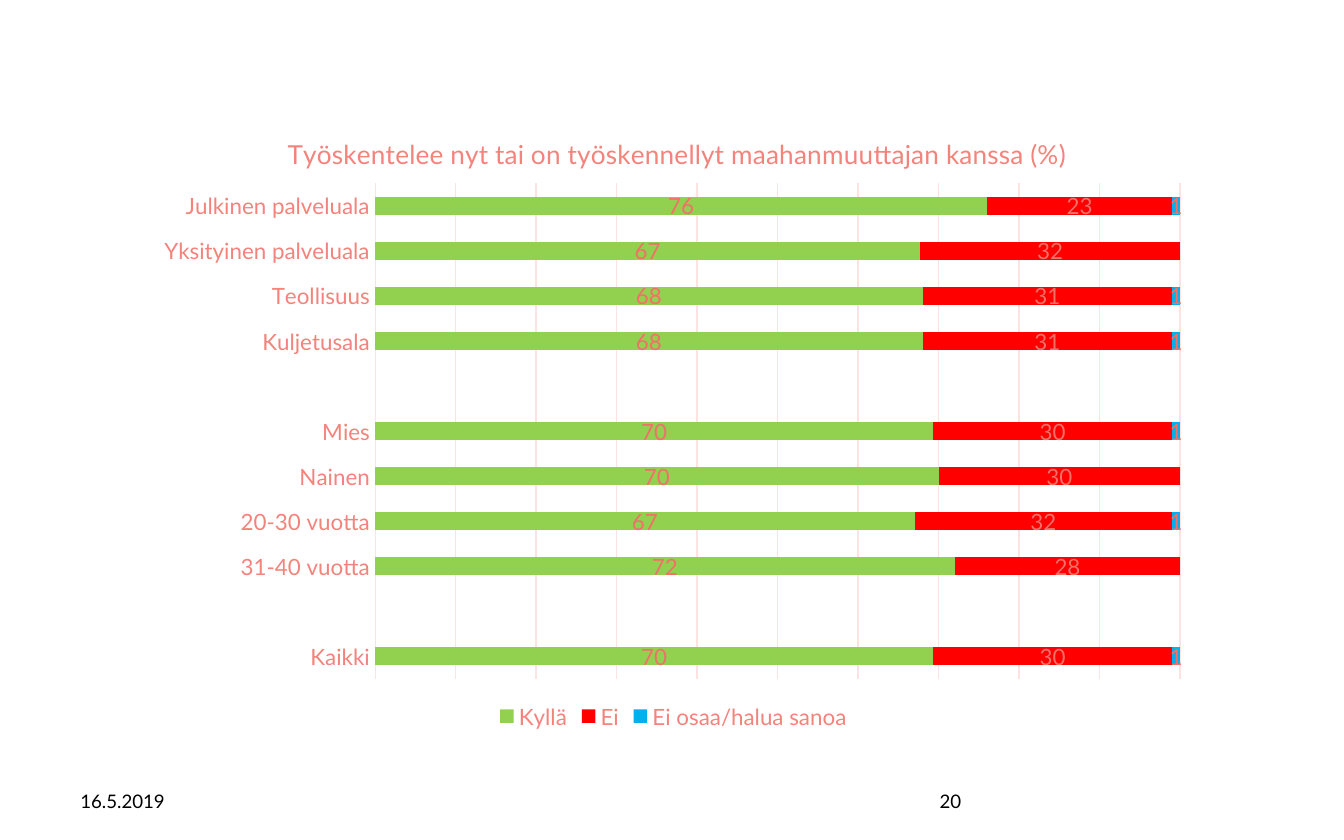
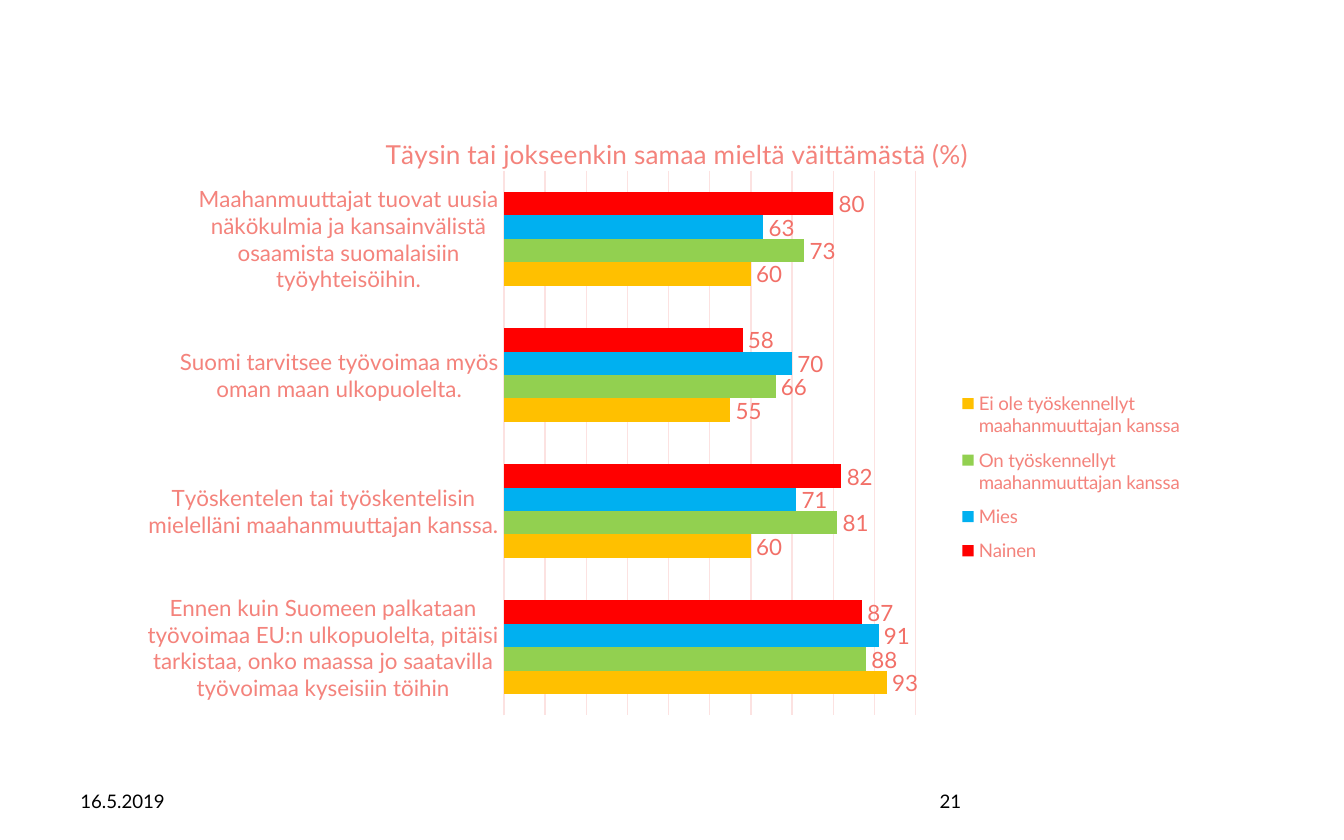
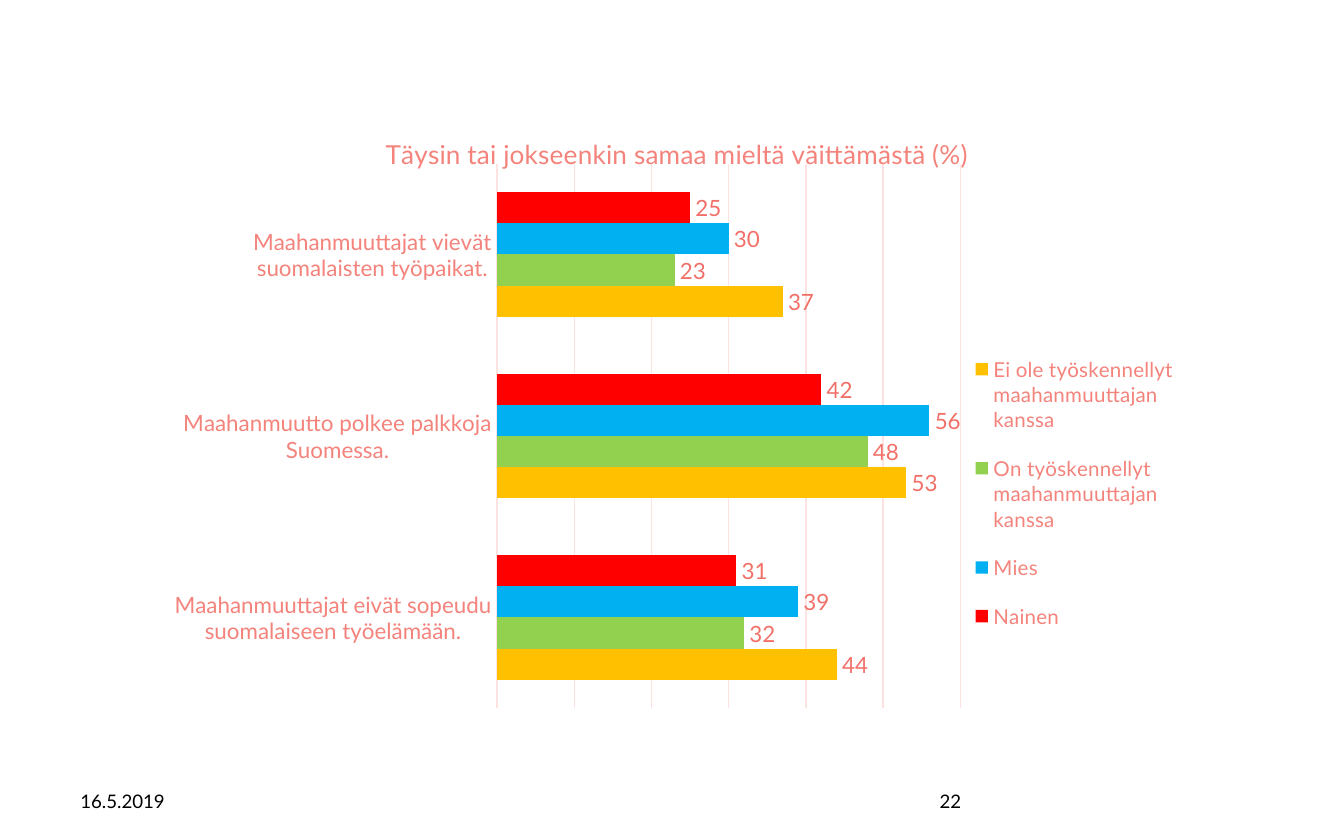
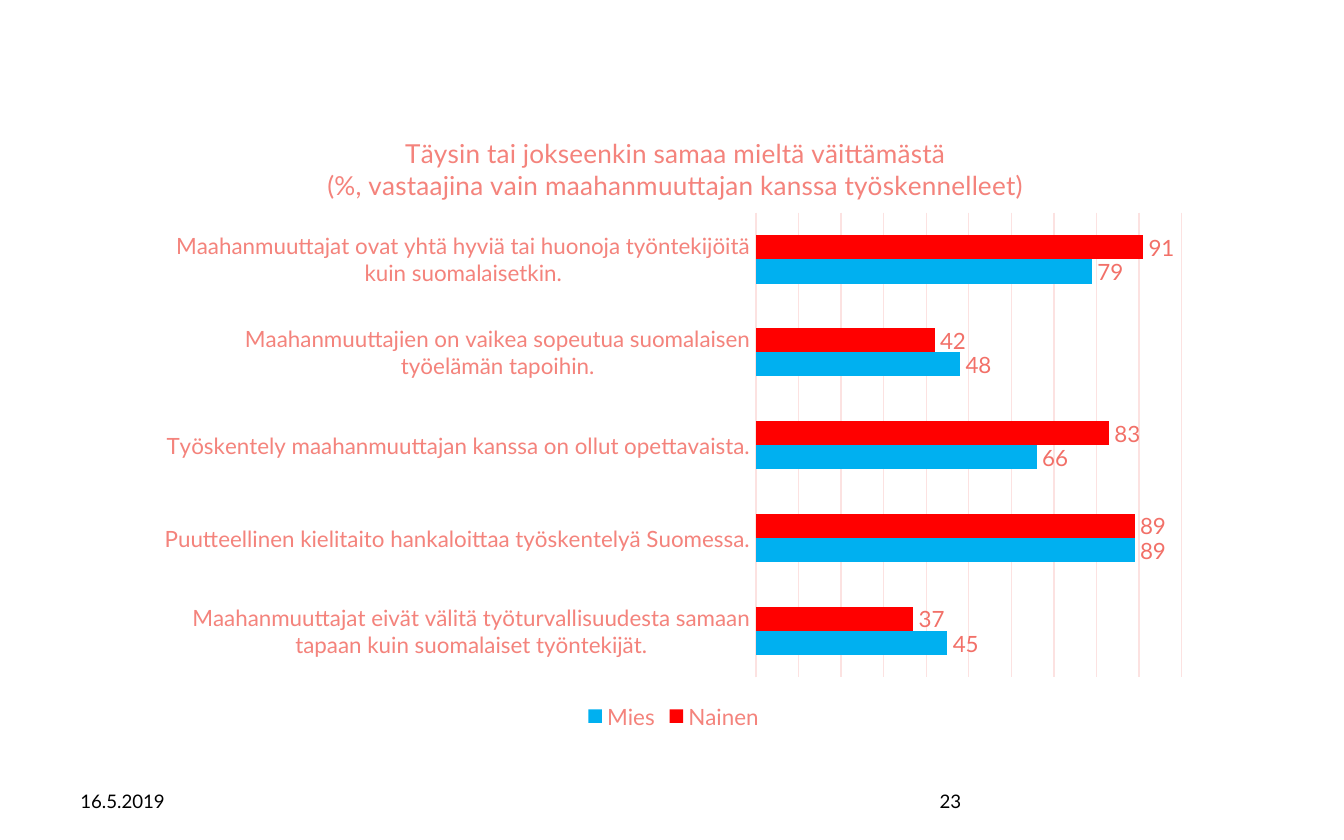
from lxml import etree
from pptx import Presentation
from pptx.chart.data import CategoryChartData
from pptx.dml.color import RGBColor
from pptx.enum.chart import (XL_CHART_TYPE, XL_LABEL_POSITION,
                             XL_LEGEND_POSITION, XL_TICK_MARK)
from pptx.enum.text import MSO_ANCHOR, PP_ALIGN
from pptx.oxml.ns import qn
from pptx.util import Pt

CLUSTERED = XL_CHART_TYPE.BAR_CLUSTERED
STACKED = XL_CHART_TYPE.BAR_STACKED_100
CENTER, OUTSIDE = XL_LABEL_POSITION.CENTER, XL_LABEL_POSITION.OUTSIDE_END
BOTTOM, RIGHT = XL_LEGEND_POSITION.BOTTOM, XL_LEGEND_POSITION.RIGHT
NO_TICK = XL_TICK_MARK.NONE
ALIGN_LEFT, ALIGN_RIGHT = PP_ALIGN.LEFT, PP_ALIGN.RIGHT
MIDDLE = MSO_ANCHOR.MIDDLE

FONT = "Lato"
BLACK = RGBColor(0x00, 0x00, 0x00)
CORAL = RGBColor(0xF4, 0x83, 0x7C)
LABEL_CORAL = RGBColor(0xF2, 0x70, 0x68)
CHART_RED = RGBColor(0xEE, 0x40, 0x35)
PALE_PINK = RGBColor(0xFC, 0xE2, 0xE1)
GREEN = RGBColor(0x92, 0xD0, 0x50)
RED = RGBColor(0xFF, 0x00, 0x00)
BLUE = RGBColor(0x00, 0xB0, 0xF0)
AMBER = RGBColor(0xFF, 0xC0, 0x00)

EMU_PER_PX = 9525
CHART_BOX = (102, 73, 756, 453)
DATE = "16.5.2019"
FIRST_PAGE_NUMBER = 20

AGREEMENT_TITLE = "Täysin tai jokseenkin samaa mieltä väittämästä (%)"
WOMEN, MEN = "Nainen", "Mies"
WORKED = "On työskennellyt maahanmuuttajan kanssa"
NOT_WORKED = "Ei ole työskennellyt maahanmuuttajan kanssa"

# Boxes inside a chart (plot, title, legend) are in px from the chart's corner.
CHARTS = [
    dict(
        title="Työskentelee nyt tai on työskennellyt maahanmuuttajan kanssa (%)",
        title_at=(100, 20), plot_box=(166, 58, 575, 354),
        kind=STACKED, label_position=CENTER, gap=150,
        legend=BOTTOM, legend_size=12, legend_box=(250, 430),
        categories=["Julkinen palveluala", "Yksityinen palveluala", "Teollisuus",
                    "Kuljetusala", "", "Mies", "Nainen", "20-30 vuotta",
                    "31-40 vuotta", "", "Kaikki"],
        series=[
            ("Kyllä", GREEN, [76, 67, 68, 68, None, 70, 70, 67, 72, None, 70]),
            ("Ei", RED, [23, 32, 31, 31, None, 30, 30, 32, 28, None, 30]),
            ("Ei osaa/halua sanoa", BLUE,
             [1, None, 1, 1, None, 1, None, 1, None, None, 1]),
        ]),
    dict(
        title=AGREEMENT_TITLE,
        title_at=(170, 20), plot_box=(258, 49, 294, 389), axis_max=100,
        legend=RIGHT, legend_size=10, legend_box=(578, 199, 170, 138),
        categories=[
            "Maahanmuuttajat tuovat uusia näkökulmia ja kansainvälistä "
            "osaamista suomalaisiin työyhteisöihin.",
            "Suomi tarvitsee työvoimaa myös oman maan ulkopuolelta.",
            "Työskentelen tai työskentelisin mielelläni maahanmuuttajan kanssa.",
            "Ennen kuin Suomeen palkataan työvoimaa EU:n ulkopuolelta, pitäisi "
            "tarkistaa, onko maassa jo saatavilla työvoimaa kyseisiin töihin",
        ],
        series=[
            (WOMEN, RED, [80, 58, 82, 87]),
            (MEN, BLUE, [63, 70, 71, 91]),
            (WORKED, GREEN, [73, 66, 81, 88]),
            (NOT_WORKED, AMBER, [60, 55, 60, 93]),
        ]),
    dict(
        title=AGREEMENT_TITLE,
        title_at=(170, 20), plot_box=(253, 44, 331, 389), axis_max=60,
        legend=RIGHT, legend_size=11, legend_box=(590, 165, 151, 228),
        categories=[
            "Maahanmuuttajat vievät suomalaisten työpaikat.",
            "Maahanmuutto polkee palkkoja Suomessa.",
            "Maahanmuuttajat eivät sopeudu suomalaiseen työelämään.",
        ],
        series=[
            (WOMEN, RED, [25, 42, 31]),
            (MEN, BLUE, [30, 56, 39]),
            (WORKED, GREEN, [23, 48, 32]),
            (NOT_WORKED, AMBER, [37, 53, 44]),
        ]),
    dict(
        title="Täysin tai jokseenkin samaa mieltä väittämästä\n"
              "(%, vastaajina vain maahanmuuttajan kanssa työskennelleet)",
        title_at=(129, 20), plot_box=(438, 79, 304, 332), axis_max=100,
        legend=BOTTOM, legend_size=12, legend_box=(313, 430),
        categories=[
            "Maahanmuuttajat ovat yhtä hyviä tai huonoja työntekijöitä "
            "kuin suomalaisetkin.",
            "Maahanmuuttajien on vaikea sopeutua suomalaisen työelämän tapoihin.",
            "Työskentely maahanmuuttajan kanssa on ollut opettavaista.",
            "Puutteellinen kielitaito hankaloittaa työskentelyä Suomessa.",
            "Maahanmuuttajat eivät välitä työturvallisuudesta samaan tapaan "
            "kuin suomalaiset työntekijät.",
        ],
        series=[
            (WOMEN, RED, [91, 42, 83, 89, 37]),
            (MEN, BLUE, [79, 48, 66, 89, 45]),
        ]),
]


def px(*lengths):
    return [length * EMU_PER_PX for length in lengths]


def style_font(font, size, color):
    font.name = FONT
    font.size = Pt(size)
    font.bold = False
    font.color.rgb = color


def style_line(line, color):
    line.color.rgb = color
    line.width = Pt(0.75)


def add_footer_text(page, text, left, align):
    box = page.shapes.add_textbox(*px(left, 556, 90, 32))
    frame = box.text_frame
    frame.word_wrap = True
    frame.vertical_anchor = MIDDLE
    para = frame.paragraphs[0]
    para.text = text
    para.alignment = align
    style_font(para.font, 10, BLACK)


def place_in_chart(element, box, after=None, inner=False):
    """Fix a chart part at box (left, top[, width, height])."""
    for old in element.findall(qn("c:layout")):
        element.remove(old)
    layout = etree.Element(qn("c:layout"))
    manual = etree.SubElement(layout, qn("c:manualLayout"))
    settings = [("layoutTarget", "inner")] if inner else []
    settings += [("xMode", "edge"), ("yMode", "edge")]
    sizes = CHART_BOX[2:] * 2
    settings += [(name, f"{length / size:.4f}")
                 for name, length, size in zip("xywh", box, sizes)]
    for name, value in settings:
        etree.SubElement(manual, qn(f"c:{name}")).set("val", value)
    if after:
        element.find(qn(after)).addnext(layout)
    else:
        element.insert(0, layout)


def add_chart_title(chart, text, position):
    title = chart.chart_title
    title.include_in_layout = False
    title.text_frame.text = text
    for para in title.text_frame.paragraphs:
        style_font(para.font, 14, CORAL)
    place_in_chart(title._element, position, after="c:tx")


def add_legend(chart, position, size, box):
    chart.has_legend = True
    legend = chart.legend
    legend.position = position
    legend.include_in_layout = False
    style_font(legend.font, size, CORAL)
    place_in_chart(legend._element, box, after="c:legendPos")


def style_axes(chart, axis_max):
    names = chart.category_axis
    names.reverse_order = True
    names.major_tick_mark = names.minor_tick_mark = NO_TICK
    style_font(names.tick_labels.font, 12, CORAL)
    style_line(names.format.line, PALE_PINK)
    values = chart.value_axis
    values.visible = False
    values.has_major_gridlines = True
    style_line(values.major_gridlines.format.line, PALE_PINK)
    if axis_max:
        values.minimum_scale = 0
        values.maximum_scale = axis_max
        values.major_unit = 10


def add_bar_chart(page, title, title_at, plot_box, legend, legend_size, legend_box,
                  categories, series, kind=CLUSTERED, label_position=OUTSIDE,
                  gap=182, axis_max=None):
    data = CategoryChartData()
    data.categories = categories
    for name, _, values in series:
        data.add_series(name, values)
    chart = page.shapes.add_chart(kind, *px(*CHART_BOX), data).chart
    style_font(chart.font, 10, CHART_RED)
    add_chart_title(chart, title, title_at)
    style_axes(chart, axis_max)
    add_legend(chart, legend, legend_size, legend_box)

    plot = chart.plots[0]
    plot.gap_width = gap
    plot.vary_by_categories = False
    for bars, (_, color, _) in zip(plot.series, series):
        bars.format.fill.solid()
        bars.format.fill.fore_color.rgb = color
        bars.invert_if_negative = False
        labels = bars.data_labels
        labels.show_value = True
        labels.position = label_position
        style_font(labels.font, 12, LABEL_CORAL)
    place_in_chart(chart._chartSpace.chart.plotArea, plot_box, inner=True)


def main():
    deck = Presentation()
    deck.slide_width, deck.slide_height = px(960, 600)
    blank_layout = deck.slide_layouts[6]
    for number, content in enumerate(CHARTS, FIRST_PAGE_NUMBER):
        page = deck.slides.add_slide(blank_layout)
        add_footer_text(page, DATE, 48, ALIGN_LEFT)
        add_footer_text(page, str(number), 606, ALIGN_RIGHT)
        add_bar_chart(page, **content)
    deck.save("out.pptx")


if __name__ == "__main__":
    main()
